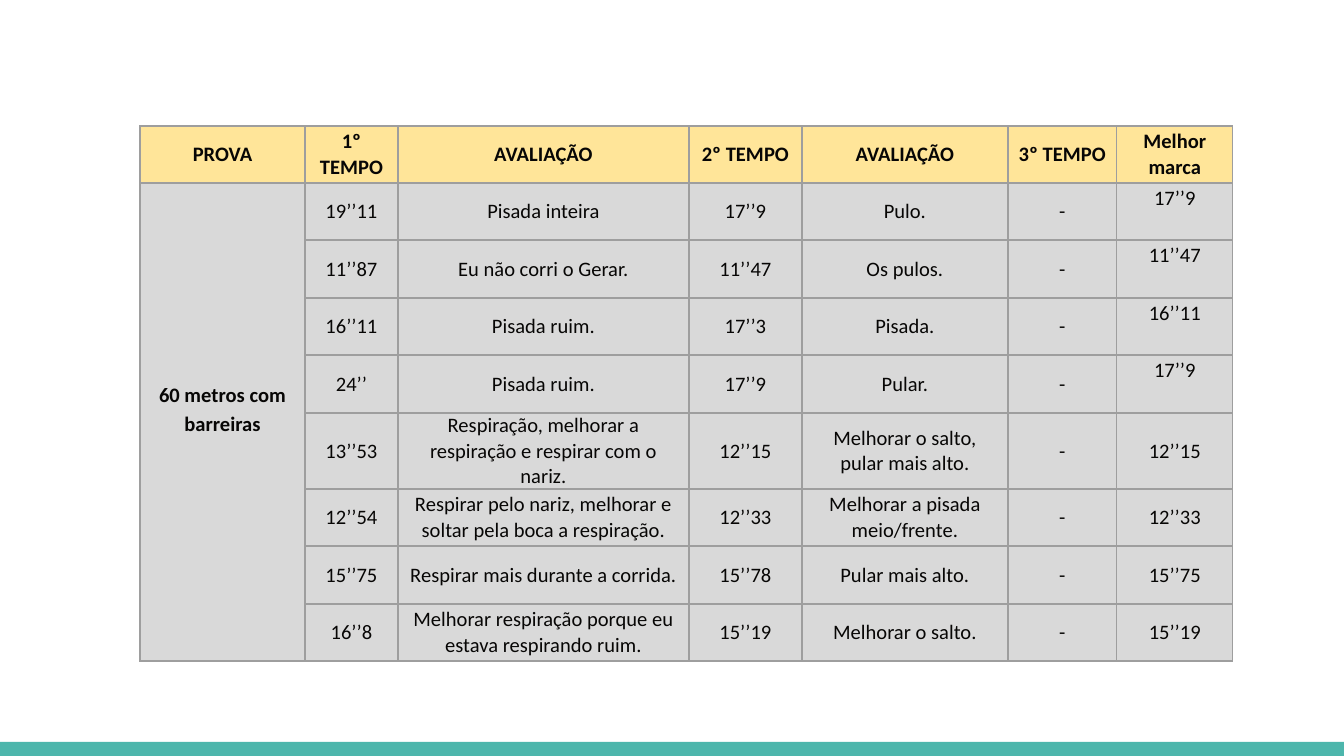
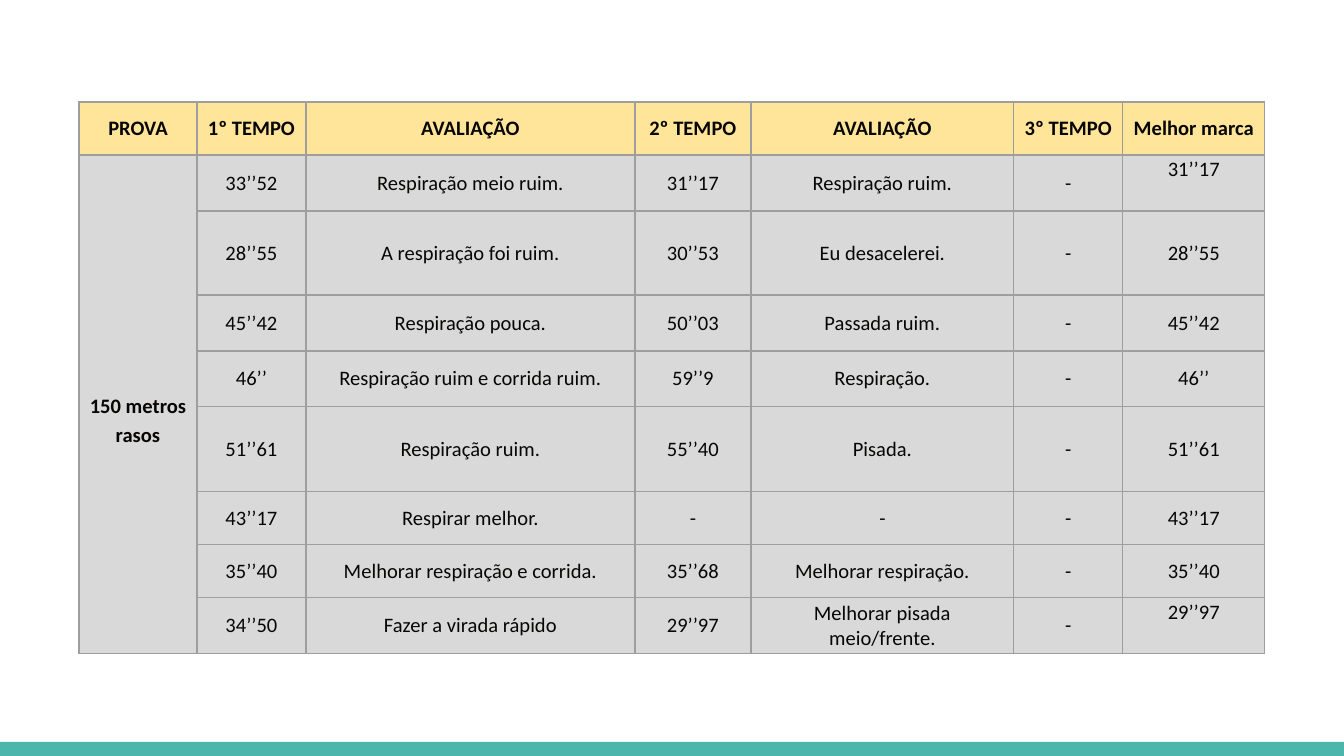
from lxml import etree
from pptx import Presentation
from pptx import util as u
from pptx.dml.color import RGBColor
from pptx.enum import shapes, text
from pptx.oxml.ns import qn

PX = u.Inches(10) / 1344
COLORS = {
    "band": "4DB6AC",
    "header": "FFE599",
    "body": "D9D9D9",
    "border": "9E9E9E",
    "ink": "070605",
}
HEADINGS = ("PROVA", "1º TEMPO", "AVALIAÇÃO", "2º TEMPO", "AVALIAÇÃO",
            "3º TEMPO", "Melhor marca")
NO_TIME = "-"


def px(length):
    return u.Emu(round(length * PX))


def color(name):
    return RGBColor.from_string(COLORS[name])


class Deck:
    FONT, SIZE = "Calibri", u.Pt(11)
    SIDE_MARGIN, LINE = 10, 27

    def __init__(self):
        self.prs = Presentation()
        self.prs.slide_width, self.prs.slide_height = px(1344), px(756)
        self.layout = self.prs.slide_layouts[6]
        self.slide = None

    def new_slide(self):
        self.slide = self.prs.slides.add_slide(self.layout)
        if len(self.prs.slides) == 1:
            self.footer_band()

    def footer_band(self):
        """Place the band on the layout that all slides share."""
        band = self.slide.shapes.add_shape(
            shapes.MSO_SHAPE.RECTANGLE, 0, px(742), px(1344), px(14))
        band.shadow.inherit = False
        band.fill.solid()
        band.fill.fore_color.rgb = color("band")
        band.line.fill.background()
        band.element.nvSpPr.cNvPr.set("id", "20")
        self.layout.shapes.element.append(band.element)

    def borders(self, cell):
        props = cell._tc.get_or_add_tcPr()
        for side in ("lnL", "lnR", "lnT", "lnB"):
            line = etree.SubElement(props, qn(f"a:{side}"), w=str(u.Pt(0.75)))
            fill = etree.SubElement(line, qn("a:solidFill"))
            etree.SubElement(fill, qn("a:srgbClr"), val=COLORS["border"])

    def cell(self, cell, words, fill, bold=False, spacing=None, above=0, below=0):
        self.borders(cell)
        cell.fill.solid()
        cell.fill.fore_color.rgb = color(fill)
        cell.vertical_anchor = text.MSO_ANCHOR.MIDDLE
        cell.margin_left = cell.margin_right = px(self.SIDE_MARGIN)
        cell.margin_top, cell.margin_bottom = px(above), px(below)
        paragraph = cell.text_frame.paragraphs[0]
        paragraph.alignment = text.PP_ALIGN.CENTER
        if spacing:
            paragraph.line_spacing = spacing
        if words:
            run = paragraph.add_run()
            run.text = words
            run.font.name, run.font.size, run.font.bold = self.FONT, self.SIZE, bold
            run.font.color.rgb = color("ink")

    def results(self, event, left, top, widths, heights, attempts, raised,
                above=0, below=0):
        """Draw one event; raised lists the rows whose best mark sits higher."""
        table = self.slide.shapes.add_table(
            len(heights), len(widths), px(left), px(top),
            px(sum(widths)), px(sum(heights))).table
        table.first_row = table.horz_banding = False
        for column, width in zip(table.columns, widths):
            column.width = px(width)
        for row, height in zip(table.rows, heights):
            row.height = px(height)

        # Header row
        for col, heading in enumerate(HEADINGS):
            self.cell(table.cell(0, col), heading, "header", bold=True)

        # Event name, spanning all attempts
        self.cell(table.cell(1, 0), event, "body", bold=True, spacing=1.15,
                  above=above, below=below)
        for row in range(2, len(heights)):
            self.cell(table.cell(row, 0), "", "body")
        table.cell(1, 0).merge(table.cell(len(heights) - 1, 0))

        # Times, remarks and best marks
        for row, (*tries, best) in enumerate(attempts, 1):
            for col, words in enumerate((*tries, NO_TIME), 1):
                self.cell(table.cell(row, col), words, "body")
            self.cell(table.cell(row, 6), best, "body",
                      below=self.LINE if row in raised else 0)


HURDLES = (
    ("19’’11", "Pisada inteira", "17’’9", "Pulo.", "17’’9"),
    ("11’’87", "Eu não corri o Gerar.", "11’’47", "Os pulos.", "11’’47"),
    ("16’’11", "Pisada ruim.", "17’’3", "Pisada.", "16’’11"),
    ("24’’", "Pisada ruim.", "17’’9", "Pular.", "17’’9"),
    ("13’’53", "Respiração, melhorar a respiração e respirar com o nariz.",
     "12’’15", "Melhorar o salto, pular mais alto.", "12’’15"),
    ("12’’54", "Respirar pelo nariz, melhorar e soltar pela boca a respiração.",
     "12’’33", "Melhorar a pisada meio/frente.", "12’’33"),
    ("15’’75", "Respirar mais durante a corrida.", "15’’78",
     "Pular mais alto.", "15’’75"),
    ("16’’8", "Melhorar respiração porque eu estava respirando ruim.",
     "15’’19", "Melhorar o salto.", "15’’19"),
)
SPRINT = (
    ("33’’52", "Respiração meio ruim.", "31’’17", "Respiração ruim.", "31’’17"),
    ("28’’55", "A respiração foi ruim.", "30’’53", "Eu desacelerei.", "28’’55"),
    ("45’’42", "Respiração pouca.", "50’’03", "Passada ruim.", "45’’42"),
    ("46’’", "Respiração ruim e corrida ruim.", "59’’9", "Respiração.", "46’’"),
    ("51’’61", "Respiração ruim.", "55’’40", "Pisada.", "51’’61"),
    ("43’’17", "Respirar melhor.", NO_TIME, NO_TIME, "43’’17"),
    ("35’’40", "Melhorar respiração e corrida.", "35’’68",
     "Melhorar respiração.", "35’’40"),
    ("34’’50", "Fazer a virada rápido", "29’’97",
     "Melhorar pisada meio/frente.", "29’’97"),
)


def main():
    deck = Deck()

    # 60 m hurdles
    deck.new_slide()
    deck.results("60 metros com barreiras", 140, 126,
                 (165, 93, 291, 113, 206, 109, 116),
                 (57, 57, 58, 57, 58, 76, 57, 58, 57),
                 HURDLES, raised=(1, 2, 3, 4), below=28)

    # 150 m sprint
    deck.new_slide()
    deck.results("150 metros rasos", 79, 102,
                 (118, 109, 329, 116, 263, 109, 142),
                 (53, 56, 84, 56, 56, 85, 53, 53, 56),
                 SPRINT, raised=(1, 8), above=29)

    deck.prs.save("out.pptx")


if __name__ == "__main__":
    main()
